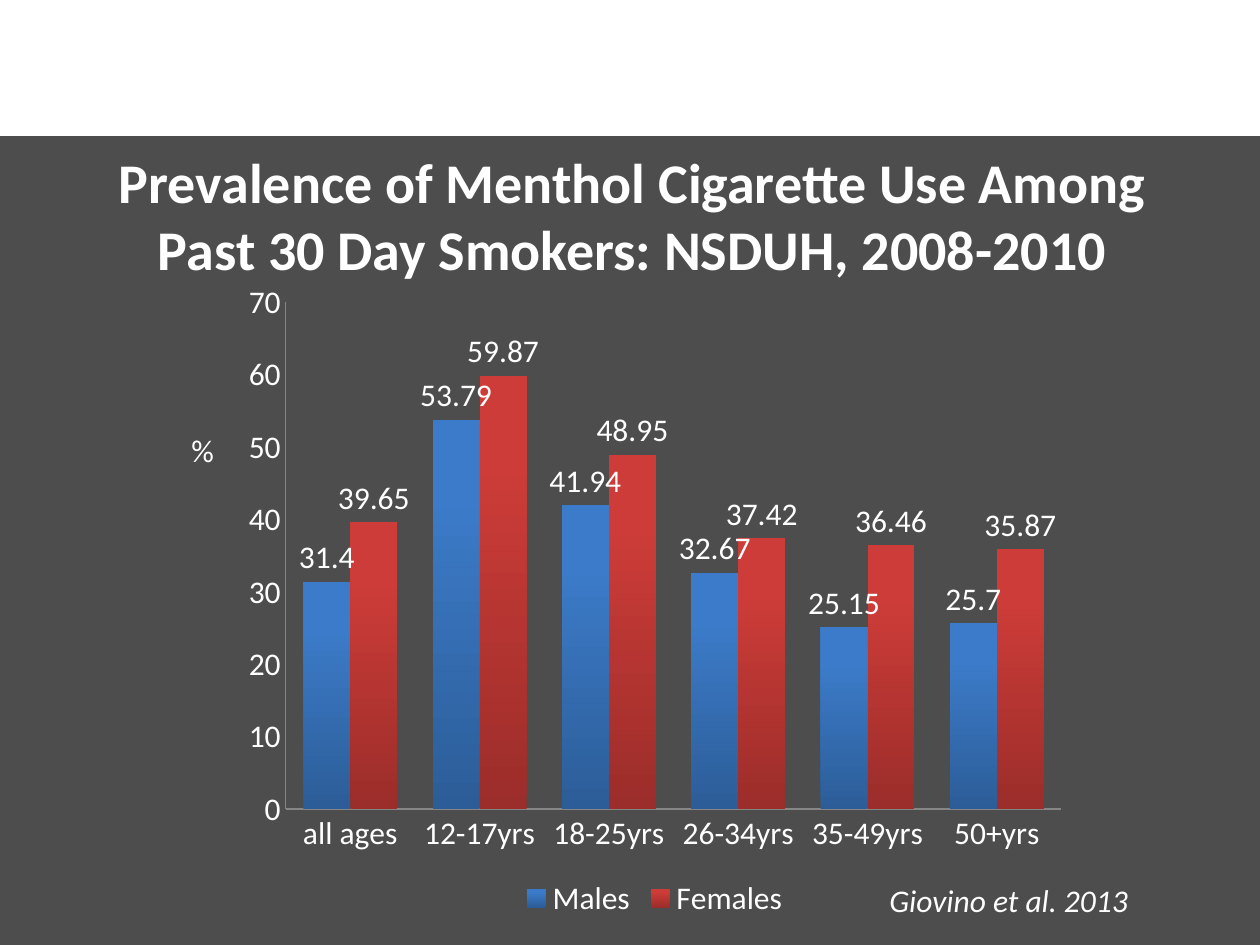
import pptx
import pptx.chart.data
import pptx.dml.color
import pptx.enum.chart
import pptx.enum.shapes
import pptx.enum.text
import pptx.oxml
import pptx.oxml.ns
import pptx.util

Inches = pptx.util.Inches
Pt = pptx.util.Pt

WHITE, PANEL, AXIS = "FFFFFF", "4D4D4D", "868686"
AGES = ["all ages", "12-17yrs", "18-25yrs", "26-34yrs", "35-49yrs", "50+yrs"]
# name: values, bottom colour, top colour
SERIES = {
    "Males": ([31.4, 53.79, 41.94, 32.67, 25.15, 25.7], "2C5D98", "3C7BC9"),
    "Females": ([39.65, 59.87, 48.95, 37.42, 36.46, 35.87], "9B2D2A", "CD3C38"),
}


def rgb(color):
    return pptx.dml.color.RGBColor.from_string(color)


class SlideBuilder:
    font = "Calibri"
    size = 18

    def __init__(self, prs):
        self.slide = prs.slides.add_slide(prs.slide_layouts[5])

    def style(self, font, size=None, bold=False, italic=False):
        font.name, font.size = self.font, Pt(size or self.size)
        font.bold, font.italic = bold, italic
        font.color.rgb = rgb(WHITE)

    def panel(self, x, y, w, h):
        sp = self.slide.shapes.add_shape(
            pptx.enum.shapes.MSO_SHAPE.RECTANGLE,
            Inches(x), Inches(y), Inches(w), Inches(h))
        sp.shadow.inherit = False
        sp.fill.solid()
        sp.fill.fore_color.rgb = rgb(PANEL)
        sp.line.fill.background()
        # Send behind the title
        self.slide.shapes.element.insert(2, sp.element)

    def title(self, text, x, y, w, h):
        sp = self.slide.shapes.title
        sp.left, sp.top, sp.width, sp.height = map(Inches, (x, y, w, h))
        tf = sp.text_frame
        tf.word_wrap = True
        tf.vertical_anchor = pptx.enum.text.MSO_ANCHOR.MIDDLE
        p = tf.paragraphs[0]
        p.alignment = pptx.enum.text.PP_ALIGN.CENTER
        r = p.add_run()
        r.text = text
        self.style(r.font, 32, bold=True)

    def text(self, text, x, y, w, h, italic=False, inset=0.1):
        sp = self.slide.shapes.add_textbox(
            Inches(x), Inches(y), Inches(w), Inches(h))
        tf = sp.text_frame
        tf.word_wrap = True
        tf.margin_left = tf.margin_right = Inches(inset)
        r = tf.paragraphs[0].add_run()
        r.text = text
        self.style(r.font, italic=italic)

    def column_chart(self, categories, series, x, y, w, h):
        data = pptx.chart.data.CategoryChartData()
        data.categories = categories
        for name, (values, _, _) in series.items():
            data.add_series(name, values)
        chart = self.slide.shapes.add_chart(
            pptx.enum.chart.XL_CHART_TYPE.COLUMN_CLUSTERED,
            Inches(x), Inches(y), Inches(w), Inches(h), data).chart
        self.style(chart.font)
        chart.has_title = False
        chart.has_legend = True
        chart.legend.position = pptx.enum.chart.XL_LEGEND_POSITION.BOTTOM
        chart.legend.include_in_layout = False

        # Axes
        for axis in (chart.category_axis, chart.value_axis):
            axis.has_major_gridlines = False
            axis.major_tick_mark = pptx.enum.chart.XL_TICK_MARK.NONE
            axis.minor_tick_mark = pptx.enum.chart.XL_TICK_MARK.NONE
            axis.format.line.color.rgb = rgb(AXIS)
            axis.format.line.width = Pt(0.75)
        chart.value_axis.minimum_scale = 0
        chart.value_axis.maximum_scale = 70
        chart.value_axis.major_unit = 10

        # Columns
        plot = chart.plots[0]
        plot.gap_width, plot.overlap = 75, 0
        plot.vary_by_categories = False
        for ser, (_, bottom, top) in zip(plot.series, series.values()):
            fill = ser.format.fill
            fill.gradient()
            fill.gradient_angle = 90
            for stop, color, pos in zip(fill.gradient_stops, (bottom, top), (0, 0.8)):
                stop.color.rgb, stop.position = rgb(color), pos
            labels = ser.data_labels
            labels.show_value = True
            labels.position = pptx.enum.chart.XL_LABEL_POSITION.OUTSIDE_END
            self.style(labels.font)
        self.plot_layout(chart, x=0.065, y=0.05, w=0.915, h=0.775)

    def plot_layout(self, chart, **fractions):
        area = chart.element.chart.plotArea
        for old in area.findall(pptx.oxml.ns.qn("c:layout")):
            area.remove(old)
        places = "".join(f'<c:{k} val="{v}"/>' for k, v in fractions.items())
        area.insert(0, pptx.oxml.parse_xml(
            f'<c:layout {pptx.oxml.ns.nsdecls("c")}><c:manualLayout>'
            '<c:layoutTarget val="inner"/><c:xMode val="edge"/>'
            f'<c:yMode val="edge"/>{places}</c:manualLayout></c:layout>'))


def main():
    prs = pptx.Presentation()
    prs.slide_width, prs.slide_height = Inches(10), Inches(7.5)
    s = SlideBuilder(prs)

    # Backdrop and title
    s.panel(0, 1.08, 10, 6.42)
    s.title("Prevalence of Menthol Cigarette Use Among "
            "Past 30 Day Smokers: NSDUH, 2008-2010", 0.52, 1.08, 9, 1.25)

    # Chart with its source and unit
    s.column_chart(AGES, SERIES, 1.83, 2.14, 6.73, 5.19)
    s.text("Giovino et al. 2013", 6.96, 6.94, 3.04, 0.4, italic=True)
    s.text("%", 1.46, 3.37, 0.34, 0.4, inset=0.06)

    prs.save("out.pptx")


if __name__ == "__main__":
    main()
